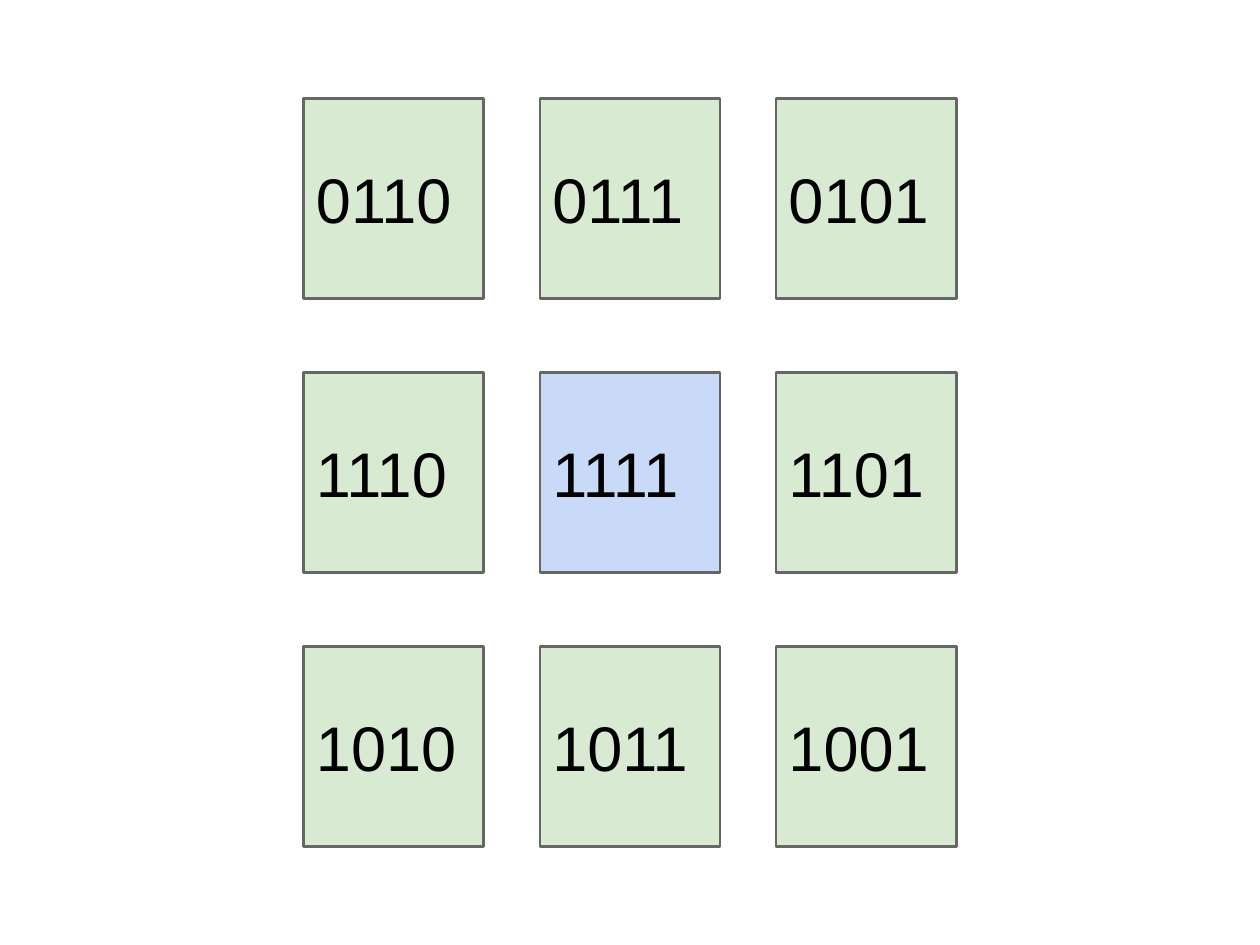
from dataclasses import dataclass

from pptx import Presentation
from pptx.dml.color import RGBColor
from pptx.enum.shapes import MSO_SHAPE
from pptx.enum.text import MSO_ANCHOR, PP_ALIGN
from pptx.slide import Slide
from pptx.util import Inches, Pt

GREEN = RGBColor(0xD9, 0xEA, 0xD3)
BLUE = RGBColor(0xC9, 0xDA, 0xF8)
GRAY = RGBColor(0x66, 0x66, 0x66)
BLACK = RGBColor(0x00, 0x00, 0x00)

LEFT, TOP = 2.41, 0.78
WIDTH, HEIGHT = 1.43, 1.59
COLUMN_STEP, ROW_STEP = 1.875, 2.175
CODES = [
    ["0110", "0111", "0101"],
    ["1110", "1111", "1101"],
    ["1010", "1011", "1001"],
]
CENTER_CODE = "1111"


@dataclass
class Cell:
    code: str
    row: int
    column: int

    @property
    def fill(self) -> RGBColor:
        return BLUE if self.code == CENTER_CODE else GREEN


def draw_cell(slide: Slide, cell: Cell) -> None:
    s = slide.shapes.add_shape(
        MSO_SHAPE.RECTANGLE,
        Inches(LEFT + cell.column * COLUMN_STEP),
        Inches(TOP + cell.row * ROW_STEP),
        Inches(WIDTH),
        Inches(HEIGHT),
    )
    s.shadow.inherit = False
    s.fill.solid()
    s.fill.fore_color.rgb = cell.fill
    s.line.color.rgb = GRAY
    s.line.width = Pt(1.5)
    tf = s.text_frame
    tf.word_wrap = True
    tf.vertical_anchor = MSO_ANCHOR.MIDDLE
    tf.margin_left = tf.margin_right = Inches(0.1)
    tf.margin_top = tf.margin_bottom = Inches(0.1)
    p = tf.paragraphs[0]
    p.text = cell.code
    p.alignment = PP_ALIGN.LEFT
    p.font.name = "Arial"
    p.font.size = Pt(36)
    p.font.color.rgb = BLACK


def main() -> None:
    prs = Presentation()
    prs.slide_width = Inches(10)
    prs.slide_height = Inches(7.5)
    slide = prs.slides.add_slide(prs.slide_layouts[6])
    for row, codes in enumerate(CODES):
        for column, code in enumerate(codes):
            draw_cell(slide, Cell(code, row, column))
    prs.save("out.pptx")


if __name__ == "__main__":
    main()
